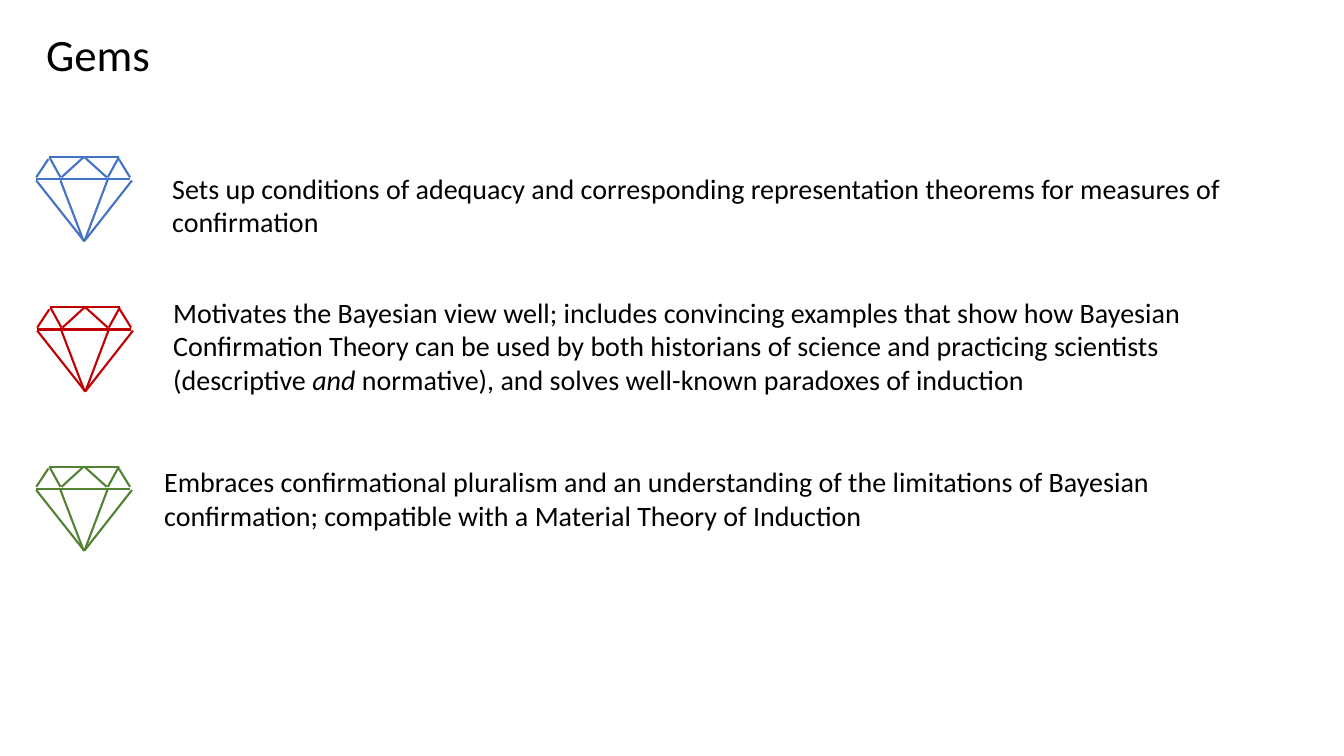
from pptx import Presentation
from pptx.dml.color import RGBColor
from pptx.enum.shapes import MSO_CONNECTOR as Connector
from pptx.enum.text import MSO_ANCHOR as Anchor
from pptx.oxml.xmlchemy import OxmlElement
from pptx.util import Pt

BLACK = RGBColor(0x00, 0x00, 0x00)
BLUE = RGBColor(0x44, 0x72, 0xC4)
RED = RGBColor(0xC0, 0x00, 0x00)
GREEN = RGBColor(0x54, 0x82, 0x35)

FACETS = [
    (9.4, 0, 59, 0),
    (8.6, 1.4, 0, 14.4),
    (59, 1.4, 67, 14.4),
    (34.5, 60.2, 0, 16.6),
    (34.5, 59.8, 68.4, 16.6),
    (0, 15.8, 67, 15.8),
    (33.8, 59.8, 17.3, 16.6),
    (34.5, 59.8, 51.1, 15.8),
    (9.4, 0, 17.3, 14.4),
    (59, 0, 51.1, 14.4),
    (33.8, 0, 18, 14.4),
    (34.5, 0, 50.4, 14.4),
]

GEMS = [
    (BLUE, (25.9, 112.3), (90, 6.5, 805.7, 55.4), [
        ("Sets up conditions of adequacy and corresponding representation "
         "theorems for measures of confirmation", False),
    ]),
    (RED, (26.6, 219.6), (90, -12.2, 809.3, 79.9), [
        ("Motivates the Bayesian view well; includes convincing examples that "
         "show how Bayesian Confirmation Theory can be used by both historians "
         "of science and practicing scientists (descriptive ", False),
        ("and", True),
        (" normative), and solves well-known paradoxes of induction", False),
    ]),
    (GREEN, (25.9, 333.4), (84.3, -5.1, 805.7, 55.4), [
        ("Embraces confirmational pluralism and an understanding of the "
         "limitations of Bayesian confirmation; compatible with a Material "
         "Theory of Induction", False),
    ]),
]


def add_text(slide, box, runs, size=20, anchor=Anchor.TOP, line_spacing=1.0):
    """Place one paragraph of (text, italic) runs in a wrapping text box."""
    frame = slide.shapes.add_textbox(*map(Pt, box)).text_frame
    frame.word_wrap = True
    frame.vertical_anchor = anchor
    paragraph = frame.paragraphs[0]
    paragraph.line_spacing = line_spacing
    for text, italic in runs:
        run = paragraph.add_run()
        run.text = text
        run.font.name = "Calibri"
        run.font.size = Pt(size)
        run.font.italic = italic
        run.font.color.rgb = BLACK


def add_gem(slide, left, top, color):
    """Draw a line gem as a group with its top left corner at the given point."""
    group = slide.shapes.add_group_shape()
    for x1, y1, x2, y2 in FACETS:
        line = group.shapes.add_connector(
            Connector.STRAIGHT,
            Pt(left + x1), Pt(top + y1), Pt(left + x2), Pt(top + y2))
        line.line.color.rgb = color
        line.line.width = Pt(1.5)
        line._element.spPr.append(OxmlElement("a:effectLst"))


def add_gem_row(slide, corner, color, text_box, runs):
    """Place a gem at the corner and its text at an offset from that corner."""
    left, top = corner
    x, y, width, height = text_box
    add_gem(slide, left, top, color)
    add_text(slide, (left + x, top + y, width, height), runs)


def add_title(slide, box):
    """Place the slide title, centred vertically in its box."""
    add_text(slide, box, [("Gems", False)], size=32, anchor=Anchor.MIDDLE,
             line_spacing=0.9)


def main():
    """Build and save the slide."""
    presentation = Presentation()
    presentation.slide_width = Pt(960)
    presentation.slide_height = Pt(540)
    slide = presentation.slides.add_slide(presentation.slide_layouts[6])
    add_title(slide, (25.9, -11.5, 828, 104.4))
    for color, corner, text_box, runs in GEMS:
        add_gem_row(slide, corner, color, text_box, runs)
    presentation.save("out.pptx")


if __name__ == "__main__":
    main()
